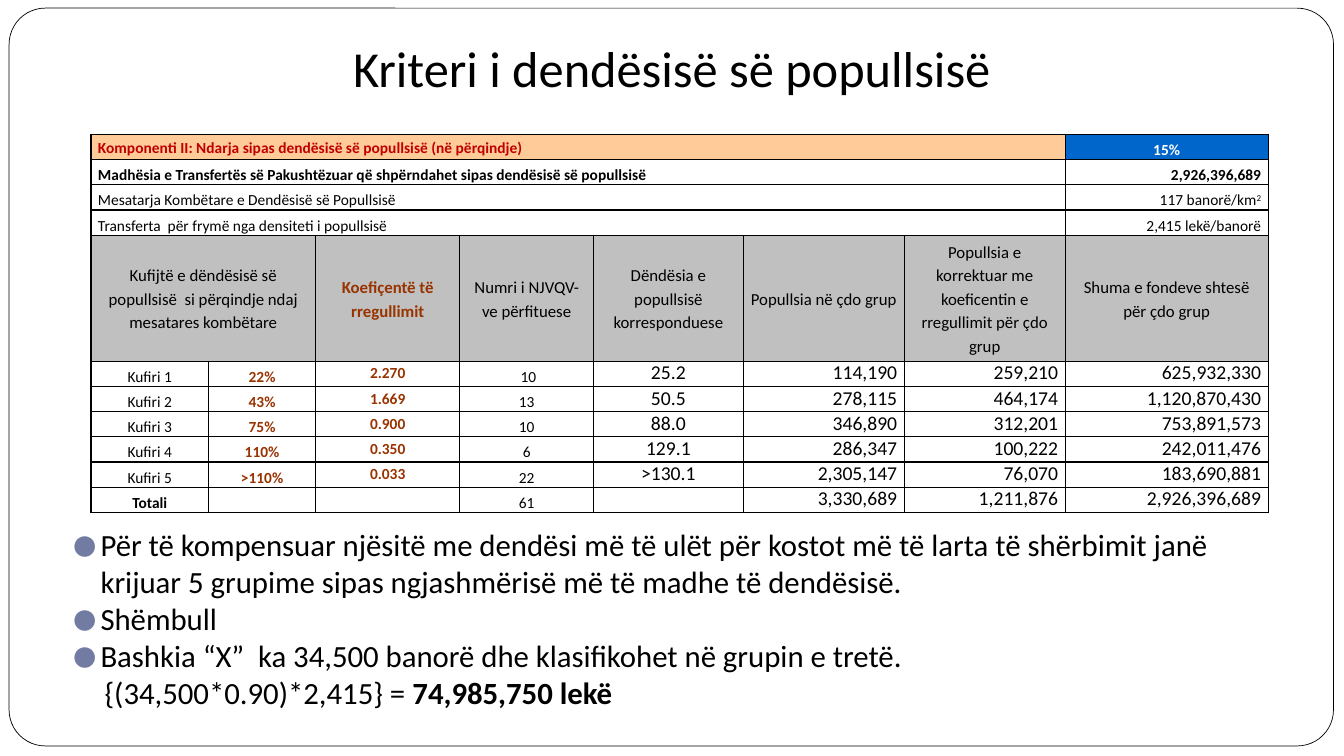
from lxml.etree import SubElement
from pptx import Presentation
from pptx.dml.color import RGBColor
from pptx.enum.shapes import MSO_SHAPE
from pptx.enum.text import MSO_ANCHOR, MSO_AUTO_SIZE, PP_ALIGN
from pptx.oxml.ns import qn
from pptx.util import Pt

COLORS = {
    "black": "000000", "white": "FFFFFF", "red": "C00000", "brown": "993300",
    "peach": "FFCC99", "blue": "0066CC", "gray": "C0C0C0", "bullet": "727CA3",
}
LEFT, CENTER, RIGHT = PP_ALIGN.LEFT, PP_ALIGN.CENTER, PP_ALIGN.RIGHT
TOP, MIDDLE, BOTTOM = MSO_ANCHOR.TOP, MSO_ANCHOR.MIDDLE, MSO_ANCHOR.BOTTOM


def write(para, text, size=11, color="black", bold=False, align=LEFT, spacing=1.0):
    para.alignment = align
    para.line_spacing = spacing
    para.space_before = para.space_after = Pt(0)
    span = para.add_run()
    span.text = text
    span.font.name = "Calibri"
    span.font.size = Pt(size)
    span.font.bold = bold
    span.font.color.rgb = RGBColor.from_string(COLORS[color])
    return span


def set_cell(cell, text, anchor=BOTTOM, fill=None, **text_format):
    cell.vertical_anchor = anchor
    if fill:
        cell.fill.solid()
        cell.fill.fore_color.rgb = RGBColor.from_string(COLORS[fill])
    return write(cell.text_frame.paragraphs[0], text, **text_format)


deck = Presentation()
deck.slide_width, deck.slide_height = Pt(960), Pt(540)
page = deck.slides.add_slide(deck.slide_layouts[1])

# Rounded frame behind everything
frame = page.shapes.add_shape(MSO_SHAPE.ROUNDED_RECTANGLE, Pt(6.5), Pt(5.8), Pt(946), Pt(527))
frame.adjustments[0] = 0.049
frame.shadow.inherit = False
frame.fill.solid()
frame.fill.fore_color.rgb = RGBColor.from_string(COLORS["white"])
frame.line.color.rgb = RGBColor.from_string(COLORS["black"])
frame.line.width = Pt(0.5)
page.shapes._spTree.insert(2, frame._element)

# Title
title = page.shapes.title
title.left, title.top, title.width, title.height = Pt(156), Pt(28), Pt(648), Pt(49)
title.text_frame.auto_size = MSO_AUTO_SIZE.NONE
title.text_frame.vertical_anchor = BOTTOM
title.text_frame.margin_bottom = Pt(7.2)
write(title.text_frame.paragraphs[0], "Kriteri i dendësisë së popullsisë", size=36, align=CENTER)

# Body text
body = page.placeholders[1]
body.left, body.top, body.width, body.height = Pt(43), Pt(372), Pt(881), Pt(156)
body.text_frame.auto_size = MSO_AUTO_SIZE.NONE
body.text_frame.vertical_anchor = TOP
points = [
    "Për të kompensuar njësitë me dendësi më të ulët për kostot më të larta të shërbimit "
    "janë krijuar 5 grupime sipas ngjashmërisë më të madhe të dendësisë.",
    "Shëmbull",
    "Bashkia “X”  ka 34,500 banorë dhe klasifikohet në grupin e tretë.",
]
para = body.text_frame.paragraphs[0]
for point in points:
    write(para, point, size=22)
    settings = para._p.get_or_add_pPr()
    settings.set("marL", str(Pt(21.6)))
    settings.set("indent", str(-Pt(21.6)))
    bullet_color = SubElement(settings, qn("a:buClr"))
    SubElement(bullet_color, qn("a:srgbClr"), val=COLORS["bullet"])
    SubElement(settings, qn("a:buSzPct"), val="155000")
    SubElement(settings, qn("a:buChar"), char="●")
    para = body.text_frame.add_paragraph()

# Worked example, indented without a bullet
write(para, "{(34,500*0.90)*2,415} = ", size=22)
write(para, "74,985,750 lekë", size=22, bold=True)
settings = para._p.get_or_add_pPr()
settings.set("marL", str(Pt(24.5)))
settings.set("indent", "0")
SubElement(settings, qn("a:buNone"))

# Table grid
widths = [84, 76.5, 103, 95.5, 107, 115, 115, 145]
heights = [18] * 4 + [90] + [18] * 6
table = page.shapes.add_table(
    len(heights), len(widths), Pt(65), Pt(96), Pt(sum(widths)), Pt(sum(heights))).table
table.first_row = table.horz_banding = False
for column, width in zip(table.columns, widths):
    column.width = Pt(width)
for row, height in zip(table.rows, heights):
    row.height = Pt(height)
for cell in table.iter_cells():
    cell.margin_left = cell.margin_right = Pt(5)
    cell.margin_top = cell.margin_bottom = Pt(0)
    for side in ("lnL", "lnR", "lnT", "lnB"):
        border = SubElement(cell._tc.get_or_add_tcPr(), qn("a:" + side), w=str(Pt(1)))
        SubElement(SubElement(border, qn("a:solidFill")), qn("a:srgbClr"), val=COLORS["black"])
    cell.fill.background()

# Summary rows
labels = [
    "Komponenti II: Ndarja sipas dendësisë së popullsisë (në përqindje)",
    "Madhësia e Transfertës së Pakushtëzuar që shpërndahet sipas dendësisë së popullsisë",
    "Mesatarja Kombëtare e Dendësisë së Popullsisë",
    "Transferta  për frymë nga densiteti i popullsisë",
]
for index, label in enumerate(labels):
    table.cell(index, 0).merge(table.cell(index, 6))
    first = index == 0
    set_cell(table.cell(index, 0), label, anchor=MIDDLE if first else BOTTOM,
             fill="peach" if first else None, color="red" if first else "black",
             bold=index < 2, spacing=1.15)
set_cell(table.cell(0, 7), "15%", fill="blue", color="white", bold=True,
         align=CENTER, spacing=1.15)
set_cell(table.cell(1, 7), "2,926,396,689", bold=True, align=RIGHT)
set_cell(table.cell(2, 7), "117 banorë/km", align=RIGHT, spacing=1.15)
square = write(table.cell(2, 7).text_frame.paragraphs[0], "2", align=RIGHT, spacing=1.15)
square.font._element.set("baseline", "30000")
set_cell(table.cell(3, 7), "2,415 lekë/banorë", align=RIGHT, spacing=1.15)

# Column headings
headings = {
    0: "Kufijtë e dëndësisë së popullsisë  si përqindje ndaj mesatares kombëtare",
    2: "Koefiçentë të rregullimit",
    3: "Numri i NJVQV-ve përfituese",
    4: "Dëndësia e popullsisë korresponduese",
    5: "Popullsia në çdo grup",
    6: "Popullsia e korrektuar me koeficentin e rregullimit për çdo grup",
    7: "Shuma e fondeve shtesë për çdo grup",
}
table.cell(4, 0).merge(table.cell(4, 1))
for index, heading in headings.items():
    set_cell(table.cell(4, index), heading, anchor=MIDDLE, fill="gray", size=12,
             color="brown" if index == 2 else "black", bold=index == 2,
             align=CENTER, spacing=1.15)

# Density groups and total
groups = [
    ("Kufiri 1", "22%", "2.270", " 10", "25.2", "114,190", "259,210", "625,932,330"),
    ("Kufiri 2", "43%", "1.669", "13", "50.5", "278,115", "464,174", "1,120,870,430"),
    ("Kufiri 3", "75%", "0.900", "10", "88.0", "346,890", "312,201", "753,891,573"),
    ("Kufiri 4", "110%", "0.350", "6", "129.1", "286,347", "100,222", "242,011,476"),
    ("Kufiri 5", ">110%", "0.033", "22", ">130.1", "2,305,147", "76,070", "183,690,881"),
    ("Totali", "", "", "61", "", "3,330,689", "1,211,876", "2,926,396,689"),
]
for row_index, group in enumerate(groups, start=5):
    for index, value in enumerate(group):
        cell = table.cell(row_index, index)
        if not value:
            SubElement(cell.text_frame.paragraphs[0]._p, qn("a:endParaRPr"), sz="1100")
            continue
        rate = index in (1, 2)
        set_cell(cell, value, anchor=BOTTOM if index in (0, 1, 3) else TOP,
                 size=14 if index > 3 else 11, color="brown" if rate else "black",
                 bold=rate or value == "Totali", align=RIGHT if index > 4 else CENTER,
                 spacing=1.15 if index < 3 else 1.0)

deck.save("out.pptx")
